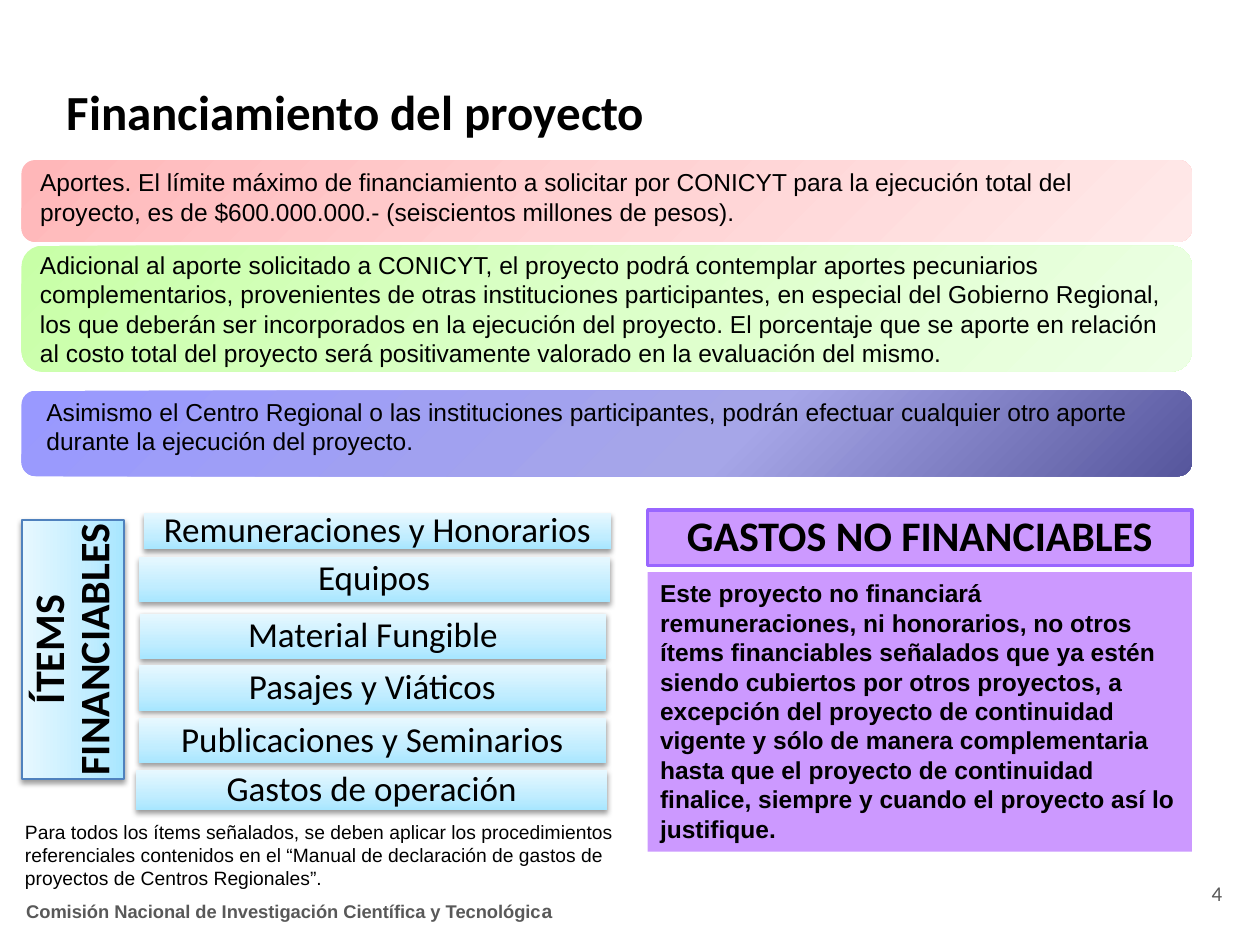
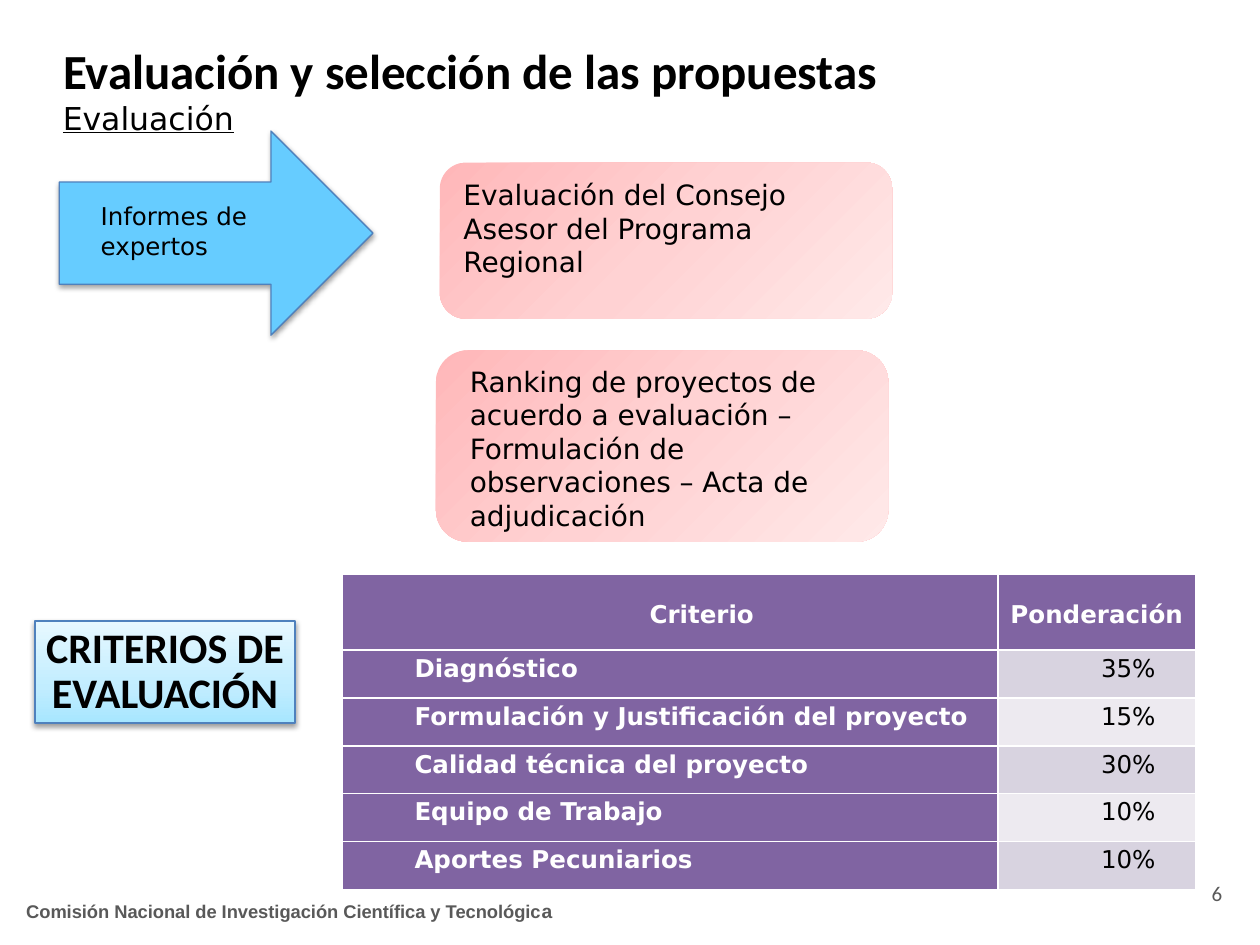
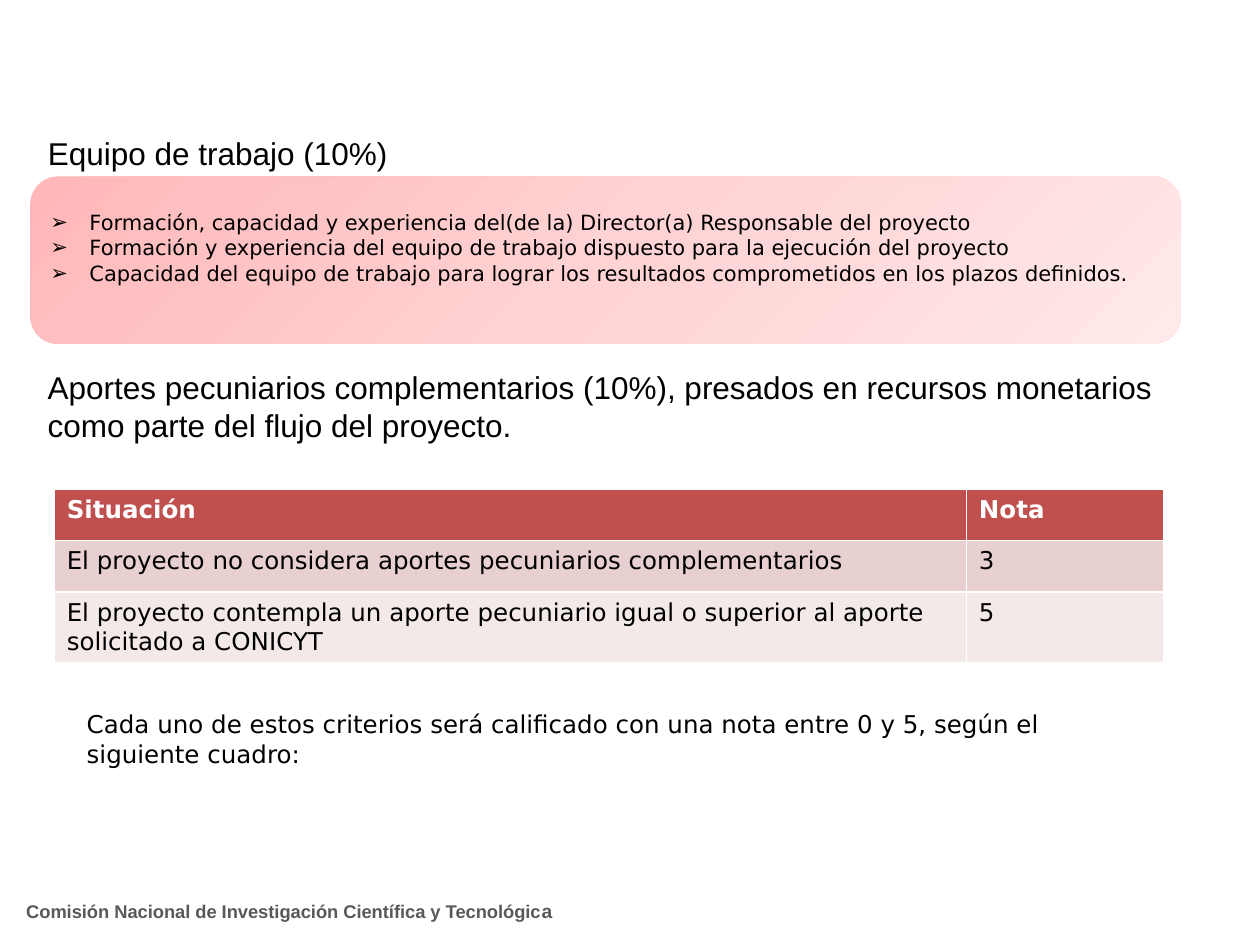
import pptx
import pptx.util
import pptx.dml.color
import pptx.enum.shapes
import pptx.enum.text
import pptx.oxml
import pptx.oxml.ns

Pt = pptx.util.Pt
RGBColor = pptx.dml.color.RGBColor
SHAPE = pptx.enum.shapes.MSO_SHAPE
ALIGN = pptx.enum.text.PP_ALIGN
ANCHOR = pptx.enum.text.MSO_ANCHOR
qn = pptx.oxml.ns.qn

# Colours
BLACK = RGBColor(0x00, 0x00, 0x00)
WHITE = RGBColor(0xFF, 0xFF, 0xFF)
GREY = RGBColor(0x59, 0x59, 0x59)
SKY = RGBColor(0x66, 0xCC, 0xFF)
STEEL = RGBColor(0x4F, 0x81, 0xBD)
LILAC = RGBColor(0xCC, 0x99, 0xFF)
VIOLET = RGBColor(0x99, 0x66, 0xFF)
PURPLE = RGBColor(0x80, 0x64, 0xA2)
PURPLE_BANDS = (RGBColor(0xD8, 0xD3, 0xE0), RGBColor(0xED, 0xEA, 0xF0))
RED = RGBColor(0xC0, 0x50, 0x4D)
RED_BANDS = (RGBColor(0xE8, 0xD0, 0xD0), RGBColor(0xF4, 0xE9, 0xE9))

# Gradients: direction and (percent, colour) stops
DIAGONAL = '<a:lin ang="2700000" scaled="1"/>'
UPWARD = '<a:lin ang="16200000" scaled="1"/>'
CORNER = '<a:path path="circle"><a:fillToRect l="100000" t="100000"/></a:path>'
PINK_FADE = (DIAGONAL, ((0, RGBColor(0xFF, 0xB7, 0xB9)),
                        (50, RGBColor(0xFF, 0xD2, 0xD3)),
                        (100, RGBColor(0xFF, 0xE9, 0xE9))))
GREEN_FADE = (DIAGONAL, ((0, RGBColor(0xC8, 0xFF, 0xA7)),
                         (50, RGBColor(0xDC, 0xFF, 0xC9)),
                         (100, RGBColor(0xED, 0xFF, 0xE5))))
INDIGO_FADE = (CORNER, ((0, RGBColor(0x56, 0x56, 0x9C)),
                        (39, RGBColor(0xA6, 0xA6, 0xE8)),
                        (100, RGBColor(0x99, 0x99, 0xFF))))
BLUE_FADE = (UPWARD, ((0, RGBColor(0xA7, 0xE6, 0xFF)),
                      (35, RGBColor(0xC1, 0xED, 0xFF)),
                      (100, RGBColor(0xE7, 0xF8, 0xFF))))

SANS, HEAD, BODY = "Arial", "Calibri", "DejaVu Sans"
COLUMNS, ROWS = 100, 75
TITLE_ONLY, TITLE_AND_BODY = 5, 1


class Deck:
    """Holds the style and the current slide; places are grid columns and rows."""

    def __init__(self):
        self.prs = pptx.Presentation()
        self.prs.slide_width = pptx.util.Inches(10)
        self.prs.slide_height = pptx.util.Inches(7.5)
        self.s = None

    def grid(self, at):
        col = self.prs.slide_width / COLUMNS
        row = self.prs.slide_height / ROWS
        return [round(v * unit) for v, unit in zip(at, (col, row, col, row))]

    def place(self, sp, at):
        sp.left, sp.top, sp.width, sp.height = self.grid(at)

    def style(self, p, size, font, color=BLACK, bold=False, align=ALIGN.LEFT, spacing=1.0):
        p.alignment, p.line_spacing = align, spacing
        p.space_before = Pt(0)
        for r in p.runs:
            r.font.size, r.font.name, r.font.bold = Pt(size), font, bold
            r.font.color.rgb = color

    def put_text(self, sp, text, size, font, anchor=ANCHOR.TOP, inset=None, **look):
        tf = sp.text_frame
        tf.text = text
        tf.word_wrap = True
        tf.auto_size = pptx.enum.text.MSO_AUTO_SIZE.NONE
        tf.vertical_anchor = anchor
        if inset is not None:
            tf.margin_left = tf.margin_right = tf.margin_top = tf.margin_bottom = inset
        for p in tf.paragraphs:
            self.style(p, size, font, **look)
        return sp

    def slide(self, layout, number=None):
        self.s = self.prs.slides.add_slide(self.prs.slide_layouts[layout])
        if number:
            self.text((74.7, 68.9, 23.3, 4), number, 12, HEAD, color=GREY,
                      align=ALIGN.RIGHT, anchor=ANCHOR.MIDDLE)

    def title(self, text, at, size=28, font=HEAD, bold=True, spacing=1.5):
        sp = self.s.shapes.title
        self.place(sp, at)
        self.put_text(sp, text, size, font, bold=bold, spacing=spacing, align=ALIGN.JUSTIFY)

    def text(self, at, text, size, font=SANS, **look):
        return self.put_text(self.s.shapes.add_textbox(*self.grid(at)), text, size, font, **look)

    def footer(self, text, last):
        """Puts the footer on the master; its last letter is slightly larger."""
        sp = self.text((1.1, 67.7, 78.1, 9.2), text, 10.5, color=GREY, bold=True,
                       anchor=ANCHOR.MIDDLE)
        p = sp.text_frame.paragraphs[0]
        p.add_run().text = last
        self.style(p, 10.5, SANS, color=GREY, bold=True)
        p.runs[-1].font.size = Pt(11)
        sp._element.nvSpPr.cNvPr.set("id", "20")
        self.prs.slide_master.shapes._spTree.append(sp._element)

    def shape(self, kind, at, fill, line=None, width=1, shadow=False):
        sp = self.s.shapes.add_shape(kind, *self.grid(at))
        if isinstance(fill, RGBColor):
            sp.fill.solid()
            sp.fill.fore_color.rgb = fill
        else:
            self.fade(sp, *fill)
        if line is None:
            sp.line.fill.background()
        else:
            sp.line.color.rgb = line
            sp.line.width = Pt(width)
        sp.shadow.inherit = False
        if shadow:
            sp._element.spPr.find(qn("a:effectLst")).append(pptx.oxml.parse_xml(
                f'<a:outerShdw {pptx.oxml.ns.nsdecls("a")} blurRad="{Pt(3.1)}" '
                f'dist="{Pt(1.6)}" dir="5400000" rotWithShape="0"><a:srgbClr val="{BLACK}">'
                '<a:alpha val="38000"/></a:srgbClr></a:outerShdw>'))
        return sp

    def fade(self, sp, direction, stops):
        sp.fill.gradient()
        spPr = sp._element.spPr
        marks = "".join(f'<a:gs pos="{pos * 1000}"><a:srgbClr val="{color}"/></a:gs>'
                        for pos, color in stops)
        spPr.replace(spPr.find(qn("a:gradFill")), pptx.oxml.parse_xml(
            f'<a:gradFill {pptx.oxml.ns.nsdecls("a")} rotWithShape="1">'
            f'<a:gsLst>{marks}</a:gsLst>{direction}</a:gradFill>'))

    def card(self, at, fill):
        return self.shape(SHAPE.ROUNDED_RECTANGLE, at, fill)

    def label(self, at, text, size=24, bold=True, fill=BLUE_FADE, line=STEEL,
              width=1, shadow=True):
        sp = self.shape(SHAPE.RECTANGLE, at, fill, line, width, shadow)
        return self.put_text(sp, text, size, HEAD, bold=bold, align=ALIGN.CENTER, spacing=0.9,
                             anchor=ANCHOR.MIDDLE, inset=Pt(1.5))

    def bullets(self, at, items, size=12):
        sp = self.s.placeholders[1]
        self.place(sp, at)
        self.s.shapes._spTree.append(sp._element)  # in front of its card
        sp.text_frame.text = "\n".join(items)
        for p in sp.text_frame.paragraphs:
            pPr = p._p.get_or_add_pPr()
            indent = pptx.util.Inches(0.31)
            pPr.set("marL", str(indent))
            pPr.set("indent", str(-indent))
            pPr.append(pptx.oxml.parse_xml(
                f'<a:buChar {pptx.oxml.ns.nsdecls("a")} char="➢"/>'))
            self.style(p, size, BODY)
        sp.text_frame.vertical_anchor = ANCHOR.MIDDLE

    def table(self, at, cols, rows, data, head, bands, head_column=False):
        tb = self.s.shapes.add_table(len(rows), len(cols), *self.grid(at)).table
        for column, width in zip(tb.columns, cols):
            column.width = self.grid((width, 0, 0, 0))[0]
        for row, height in zip(tb.rows, rows):
            row.height = self.grid((0, height, 0, 0))[1]
        for i, record in enumerate(data):
            for j, value in enumerate(record):
                cell = tb.cell(i, j)
                strong = i == 0 or (head_column and j == 0)
                cell.text = value
                cell.fill.solid()
                cell.fill.fore_color.rgb = head if strong else bands[(i - 1) % 2]
                self.style(cell.text_frame.paragraphs[0], 14, BODY, bold=strong,
                           color=WHITE if strong else BLACK)
        return tb


def financing(d):
    d.slide(TITLE_ONLY, "4")
    d.footer("Comisión Nacional de Investigación Científica y Tecnológic", "a")
    d.title("Financiamiento del proyecto", (4.3, 3.6, 74.8, 7))

    # Contributions
    d.card((1.7, 12.7, 92.9, 6.5), PINK_FADE)
    d.text((2.2, 12.8, 91.3, 8.1), "Aportes. El límite máximo de financiamiento a solicitar por "
           "CONICYT para la ejecución total del proyecto, es de $600.000.000.- "
           "(seiscientos millones de pesos).", 14)
    d.card((1.7, 31, 92.9, 6.8), INDIGO_FADE)
    d.text((2.7, 31, 91.3, 5.7), "Asimismo el Centro Regional o las instituciones participantes, "
           "podrán efectuar cualquier otro aporte durante la ejecución del proyecto.", 14)
    d.put_text(d.card((1.7, 19.5, 92.9, 10), GREEN_FADE),
               "Adicional al aporte solicitado a CONICYT, el proyecto podrá contemplar aportes "
               "pecuniarios complementarios, provenientes de otras instituciones participantes, "
               "en especial del Gobierno Regional, los que deberán ser incorporados en la "
               "ejecución del proyecto. El porcentaje que se aporte en relación al costo total "
               "del proyecto será positivamente valorado en la evaluación del mismo.",
               14, SANS, anchor=ANCHOR.MIDDLE)

    # Items that can be financed
    d.label((-4.5, 47.5, 20.6, 8.1), "ÍTEMS FINANCIABLES").rotation = 270
    items = (("Remuneraciones y Honorarios", 11.4, 40.7, 37.1, 2.9),
             ("Equipos", 11, 44.2, 37.4, 3.6),
             ("Material Fungible", 11.1, 48.7, 37, 3.6),
             ("Pasajes y Viáticos", 11, 52.8, 37.1, 3.6),
             ("Publicaciones y Seminarios", 11, 57, 37.1, 3.6),
             ("Gastos de operación", 10.8, 61.1, 37.4, 3.2))
    for name, *at in items:
        d.label(at, name, size=20, bold=False, line=None)
    d.text((1, 64.6, 54.4, 6.6), "Para todos los ítems señalados, se deben aplicar los "
           "procedimientos referenciales contenidos en el “Manual de declaración de gastos de "
           "proyectos de Centros Regionales”.", 11)

    # Expenses that cannot be financed
    d.label((51.4, 40.5, 43.2, 4.4), "GASTOS NO FINANCIABLES", fill=LILAC, line=VIOLET,
            width=2, shadow=False)
    d.put_text(d.shape(SHAPE.RECTANGLE, (51.4, 45.4, 43.2, 22.2), LILAC),
               "Este proyecto no financiará remuneraciones, ni honorarios, no otros ítems "
               "financiables señalados que ya estén siendo cubiertos por otros proyectos, a "
               "excepción del proyecto de continuidad vigente y sólo de manera complementaria "
               "hasta que el proyecto de continuidad finalice, siempre y cuando el proyecto así "
               "lo justifique.", 14, SANS, bold=True)


def evaluation(d):
    d.slide(TITLE_ONLY, "6")
    d.title("Evaluación y selección de las propuestas", (4, 0.4, 74.8, 7))
    subtitle = d.text((4, 7.4, 27.6, 4), "Evaluación", 18, BODY)
    subtitle.text_frame.paragraphs[0].runs[0].font.underline = True

    # Process
    d.shape(SHAPE.RIGHT_ARROW, (4.7, 10.4, 24.9, 16.2), SKY, STEEL, 0.75, shadow=True)
    d.text((7, 15.5, 16.1, 5.7), "Informes de expertos", 14, BODY)
    d.card((34.9, 12.9, 35.9, 12.4), PINK_FADE)
    d.text((35.8, 13.6, 34.9, 11.8), "Evaluación del Consejo Asesor del Programa Regional",
           16, BODY)
    d.card((34.6, 27.8, 35.9, 15.2), PINK_FADE)
    d.text((36.3, 28.4, 34.9, 17.2), "Ranking de proyectos de acuerdo a evaluación – Formulación "
           "de observaciones – Acta de adjudicación", 16, BODY)

    # Criteria
    d.label((2.8, 49.3, 20.6, 8.1), "CRITERIOS DE EVALUACIÓN")
    data = (("Criterio", "Ponderación"),
            ("Diagnóstico", "35%"),
            ("Formulación y Justificación del proyecto", "15%"),
            ("Calidad técnica del proyecto", "30%"),
            ("Equipo de Trabajo", "10%"),
            ("Aportes Pecuniarios", "10%"))
    tb = d.table((27.2, 45.6, 67.7, 25), (52, 15.7), [6] + [3.8] * 5, data,
                 PURPLE, PURPLE_BANDS, head_column=True)
    for i in range(len(data)):
        for j in range(2):
            cell = tb.cell(i, j)
            cell.margin_left = cell.margin_right = pptx.util.Inches(0.07)
            cell.margin_top = cell.margin_bottom = 0
            p = cell.text_frame.paragraphs[0]
            p.line_spacing, p.space_after = 1.15, Pt(6)
            p.alignment = ALIGN.CENTER if i == 0 or j == 1 else ALIGN.JUSTIFY
            if (i, j) != (0, 1):
                p._p.get_or_add_pPr().set("marL", str(pptx.util.Inches(0.5)))
            if i == 0:
                cell.vertical_anchor = ANCHOR.MIDDLE


def team_and_contributions(d):
    d.slide(TITLE_AND_BODY)

    # Team
    d.title("Equipo de trabajo (10%)", (2.8, 10.1, 72.9, 4), size=18, font=SANS,
            bold=False, spacing=1.0)
    d.card((2.4, 14, 91.3, 13.3), PINK_FADE)
    d.bullets((3, 14, 90, 11.3), (
        "Formación, capacidad y experiencia del(de la) Director(a) Responsable del proyecto",
        "Formación y experiencia del equipo de trabajo dispuesto para la ejecución del proyecto",
        "Capacidad del equipo de trabajo para lograr los resultados comprometidos en los plazos "
        "definidos."))

    # Complementary contributions
    d.text((2.8, 28.7, 91, 10.1), "Aportes pecuniarios complementarios (10%), presados en "
           "recursos monetarios como parte del flujo del proyecto.", 18)
    data = (("Situación", "Nota"),
            ("El proyecto no considera aportes pecuniarios complementarios", "3"),
            ("El proyecto contempla un aporte pecuniario igual o superior al aporte solicitado "
             "a CONICYT", "5"))
    d.table((4.3, 38.8, 88.1, 13.8), (72.4, 15.7), (4.1, 4.1, 5.6), data, RED, RED_BANDS)
    d.text((5.9, 55.8, 86.7, 5.7), "Cada uno de estos criterios será calificado con una nota "
           "entre 0 y 5, según el siguiente cuadro:", 14, BODY)


def main():
    d = Deck()
    financing(d)
    evaluation(d)
    team_and_contributions(d)
    d.prs.save("out.pptx")


if __name__ == "__main__":
    main()
